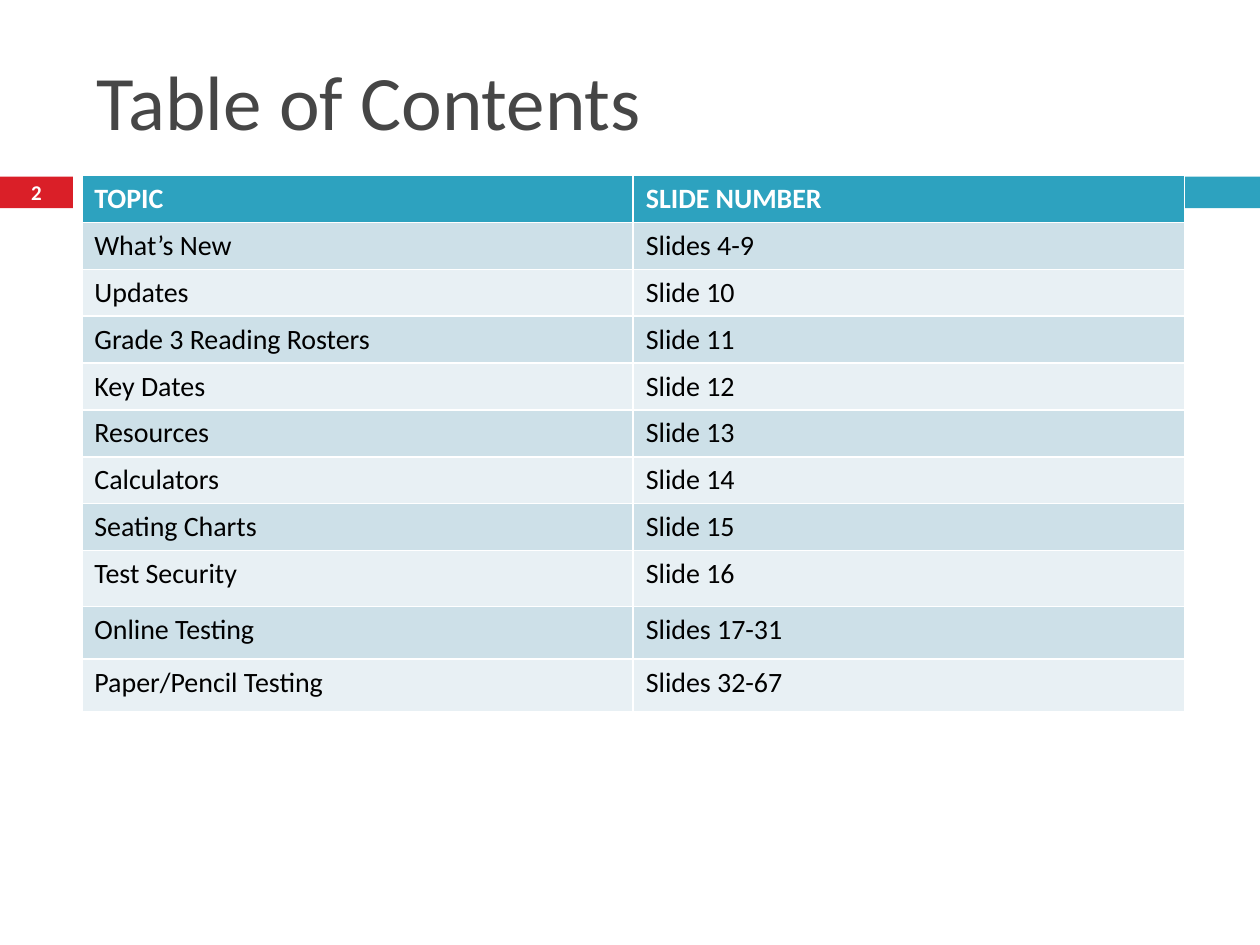
from dataclasses import dataclass

from pptx import Presentation
from pptx.dml.color import RGBColor
from pptx.enum.shapes import MSO_SHAPE
from pptx.enum.text import MSO_ANCHOR, PP_ALIGN
from pptx.util import Cm, Pt


@dataclass(frozen=True)
class Theme:
    face: str = "Calibri"
    title: str = "464646"
    teal: str = "2DA2BF"
    red: str = "DA1F28"
    white: str = "FFFFFF"
    black: str = "000000"
    bands: tuple = ("CDE0E8", "E8F0F4")
    big: int = 44
    body: int = 16
    small: int = 12


THEME = Theme()
TOPICS = [
    ("TOPIC", "SLIDE NUMBER"),
    ("What’s New", "Slides 4-9"),
    ("Updates", "Slide 10"),
    ("Grade 3 Reading Rosters", "Slide 11"),
    ("Key Dates", "Slide 12"),
    ("Resources", "Slide 13"),
    ("Calculators", "Slide 14"),
    ("Seating Charts", "Slide 15"),
    ("Test Security", "Slide 16"),
    ("Online Testing", "Slides 17-31"),
    ("Paper/Pencil Testing", "Slides 32-67"),
]
ROW = 0.94
TALL = {8: 1.13, 9: 1.06, 10: 1.06}  # rows that differ from ROW


def write(frame, text, size, color, bold=False, align=PP_ALIGN.LEFT):
    """Put one formatted paragraph in a text frame."""
    frame.text = text
    para = frame.paragraphs[0]
    para.alignment = align
    look = {"name": THEME.face, "size": Pt(size), "bold": bold}
    for key, value in look.items():
        setattr(para.font, key, value)
    para.font.color.rgb = RGBColor.from_string(color)


def paint(part, color):
    part.fill.solid()
    part.fill.fore_color.rgb = RGBColor.from_string(color)


def add_title(slide, box, text):
    title = slide.shapes.title
    for key, value in zip(("left", "top", "width", "height"), box):
        setattr(title, key, Cm(value))
    title.text_frame.vertical_anchor = MSO_ANCHOR.MIDDLE
    write(title.text_frame, text, THEME.big, THEME.title)


def add_strip(slide, box, number):
    """Red page badge, a narrow gap, then a teal bar to the right edge."""
    left, top, width, height = box
    badge, gap = 1.47, 0.18
    start = badge + gap
    spans = [(0, badge, THEME.red), (start, width - start, THEME.teal)]
    for shift, span, color in spans:
        bar = slide.shapes.add_shape(
            MSO_SHAPE.RECTANGLE, Cm(left + shift), Cm(top), Cm(span), Cm(height))
        bar.shadow.inherit = False
        bar.line.fill.background()
        paint(bar, color)
        if color == THEME.red:
            frame = bar.text_frame
            frame.margin_top = frame.margin_bottom = 0
            frame.vertical_anchor = MSO_ANCHOR.MIDDLE
            write(frame, number, THEME.small, THEME.white, True, PP_ALIGN.CENTER)


def add_topics(slide, box, rows):
    left, top, width = box
    highs = [TALL.get(i, ROW) for i in range(len(rows))]
    table = slide.shapes.add_table(
        len(rows), len(rows[0]),
        Cm(left), Cm(top), Cm(width), Cm(sum(highs))).table
    for i, (row, high) in enumerate(zip(rows, highs)):
        table.rows[i].height = Cm(high)
        head = i == 0
        fill = THEME.teal if head else THEME.bands[(i - 1) % 2]
        ink = THEME.white if head else THEME.black
        for j, text in enumerate(row):
            cell = table.cell(i, j)
            paint(cell, fill)
            write(cell.text_frame, text, THEME.body, ink, head)


def main():
    deck = Presentation()
    deck.slide_width, deck.slide_height = Cm(25.4), Cm(19.05)
    slide = deck.slides.add_slide(deck.slide_layouts[5])
    add_strip(slide, (0, 3.56, 25.4, 0.64), "2")
    add_title(slide, (1.7, 0.64, 22.66, 2.74), "Table of Contents")
    add_topics(slide, (1.65, 3.54, 22.23), TOPICS)
    deck.save("out.pptx")


if __name__ == "__main__":
    main()
